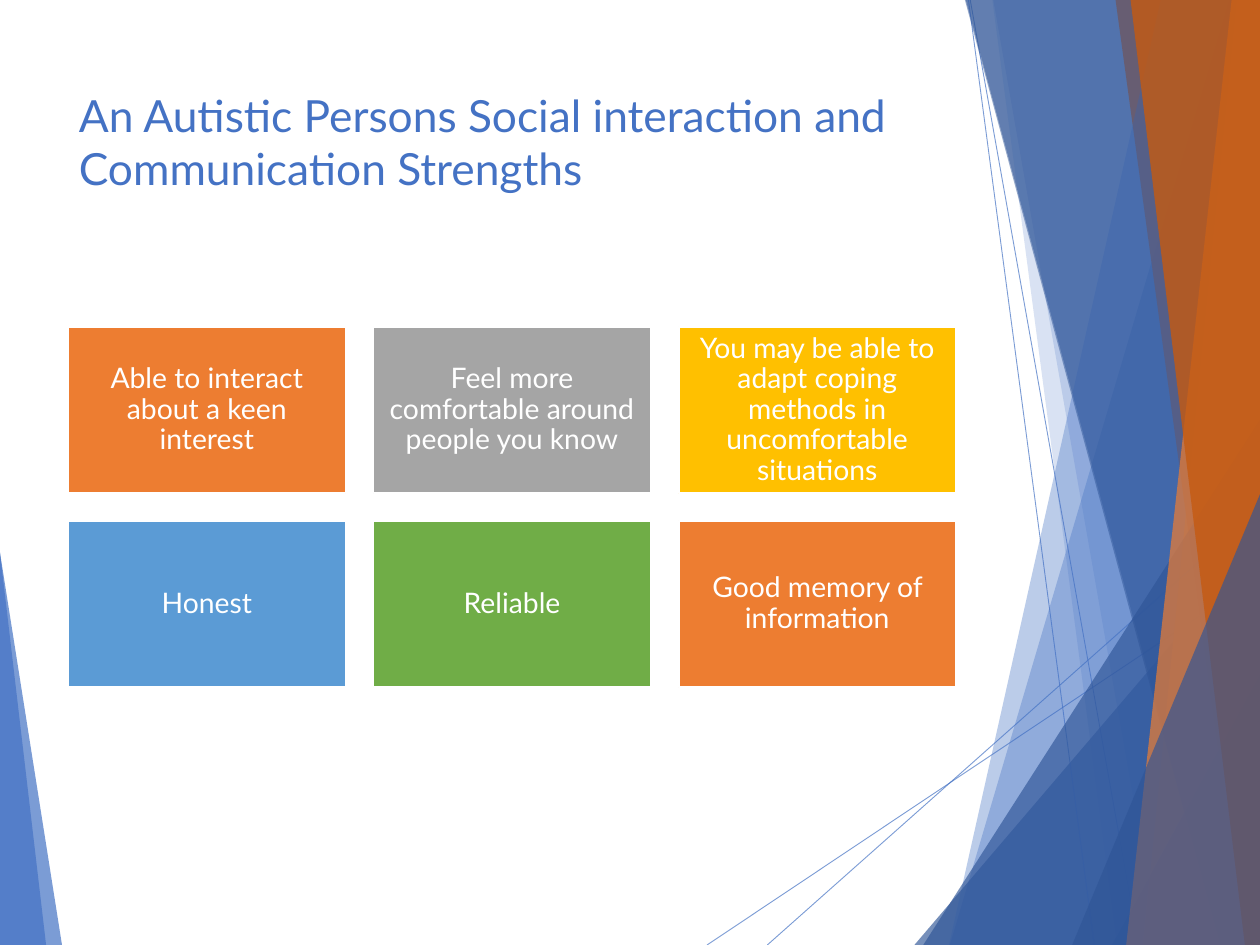
from lxml.etree import SubElement
from pptx import Presentation
from pptx.dml.color import RGBColor
from pptx.enum.shapes import MSO_CONNECTOR, MSO_SHAPE
from pptx.enum.text import MSO_ANCHOR, PP_ALIGN
from pptx.oxml.ns import qn
from pptx.util import Inches, Pt

WIDE, HIGH = 14.22, 10.67
FONT = "Lato"
HEX = {
    "blue": "4472C4", "navy": "2F5597", "orange": "ED7D31", "rust": "C55A11",
    "gray": "A5A5A5", "gold": "FFC000", "sky": "5B9BD5", "green": "70AD47",
    "white": "FFFFFF",
}
CARDS = [
    ("Able to interact about a keen interest", "orange"),
    ("Feel more comfortable around people you know", "gray"),
    ("You may be able to adapt coping methods in uncomfortable situations", "gold"),
    ("Honest", "sky"),
    ("Reliable", "green"),
    ("Good memory of information", "orange"),
]


def rgb(name):
    return RGBColor.from_string(HEX[name])


def fade(shape, alpha):
    """Set the opacity, in percent, of the one colour the shape holds."""
    for tint in shape._element.spPr.iter(qn("a:srgbClr")):
        SubElement(tint, qn("a:alpha")).set("val", str(alpha * 1000))


def paint(shape, color, alpha):
    shape.shadow.inherit = False
    shape.line.fill.background()
    shape.fill.solid()
    shape.fill.fore_color.rgb = rgb(color)
    fade(shape, alpha)


def add_band(slide, top, foot, color, alpha):
    """Fill from a slanted left side, top to foot, to the slide's right edge."""
    path = slide.shapes.build_freeform(Inches(top), 0)
    corners = [(foot, HIGH), (WIDE, HIGH), (WIDE, 0)]
    path.add_line_segments([(Inches(x), Inches(y)) for x, y in corners])
    paint(path.convert_to_shape(), color, alpha)


def add_wedge(slide, left, top, width, peak, color, alpha):
    """Stand a triangle on the slide's foot; peak 0 is left, 1 is right."""
    wedge = slide.shapes.add_shape(
        MSO_SHAPE.ISOSCELES_TRIANGLE,
        Inches(left), Inches(top), Inches(width), Inches(HIGH - top))
    wedge.adjustments[0] = peak
    paint(wedge, color, alpha)


def add_line(slide, *ends):
    line = slide.shapes.add_connector(
        MSO_CONNECTOR.STRAIGHT, *[Inches(end) for end in ends])
    line.line.color.rgb = rgb("blue")
    line.line.width = Pt(0.75)
    SubElement(line._element.spPr, qn("a:effectLst"))
    fade(line, 70)


def style(para, size, color, align):
    para.alignment = align
    for run in para.runs:
        run.font.name = FONT
        run.font.size = Pt(size)
        run.font.color.rgb = rgb(color)


def add_title(slide, text):
    title = slide.shapes.title
    title.left, title.top = Inches(0.79), Inches(0.95)
    title.width, title.height = Inches(10.03), Inches(2.05)
    frame = title.text_frame
    frame.text = text
    frame.word_wrap = True
    frame.vertical_anchor = MSO_ANCHOR.TOP
    style(frame.paragraphs[0], 36, "blue", PP_ALIGN.LEFT)


def add_card(slide, left, top, text, color):
    card = slide.shapes.add_shape(
        MSO_SHAPE.RECTANGLE, Inches(left), Inches(top), Inches(3.13), Inches(1.88))
    card.shadow.inherit = False
    card.fill.solid()
    card.fill.fore_color.rgb = rgb(color)
    card.line.color.rgb = rgb("white")
    card.line.width = Pt(1.5)
    frame = card.text_frame
    frame.margin_left = frame.margin_right = Inches(0.1)
    frame.margin_top = frame.margin_bottom = Inches(0.1)
    frame.word_wrap = True
    frame.vertical_anchor = MSO_ANCHOR.MIDDLE
    frame.text = text
    para = frame.paragraphs[0]
    para.line_spacing = 0.9
    style(para, 23, "white", PP_ALIGN.CENTER)


def add_back(slide):
    """Draw the lower layer of facets."""
    add_wedge(slide, 0, 6.24, 0.7, 0, "blue", 70)
    add_line(slide, 7.98, HIGH, WIDE, 6.5)
    add_line(slide, 10.95, 0, 12.85, HIGH)
    add_band(slide, 13.87, 10.72, "blue", 36)
    add_band(slide, 11.21, 13.08, "blue", 20)
    add_wedge(slide, 10.32, 6.1, 3.9, 1, "navy", 66)
    add_band(slide, 10.9, 13.79, "navy", 50)
    add_band(slide, 13.96, 12.9, "orange", 70)
    add_band(slide, 12.59, 14.05, "rust", 82)
    add_wedge(slide, 12.55, 7.61, 1.67, 1, "navy", 66)


def add_front(slide):
    """Draw the upper layer of facets."""
    add_line(slide, 10.93, 0, 12.35, HIGH)
    add_line(slide, WIDE, 5.73, 8.66, HIGH)
    add_band(slide, 13.1, 10.71, "blue", 36)
    add_band(slide, 11.2, 12.61, "blue", 20)
    add_wedge(slide, 10.42, 4.74, 3.8, 1, "navy", 66)
    add_band(slide, 10.89, 13.77, "navy", 50)
    add_band(slide, 13.9, 12.71, "orange", 70)
    add_band(slide, 12.76, 14.05, "rust", 80)
    add_wedge(slide, 12.1, 5.58, 2.12, 1, "navy", 66)
    add_wedge(slide, 0, 6.24, 0.52, 0, "blue", 70)


def main():
    deck = Presentation()
    deck.slide_width, deck.slide_height = Inches(WIDE), Inches(HIGH)
    slide = deck.slides.add_slide(deck.slide_layouts[5])
    add_back(slide)
    add_front(slide)
    add_title(
        slide, "An Autistic Persons Social interaction and Communication Strengths")
    for place, (text, color) in enumerate(CARDS):
        row, col = divmod(place, 3)
        add_card(slide, 0.77 + 3.445 * col, 3.69 + 2.19 * row, text, color)
    deck.save("out.pptx")


if __name__ == "__main__":
    main()
